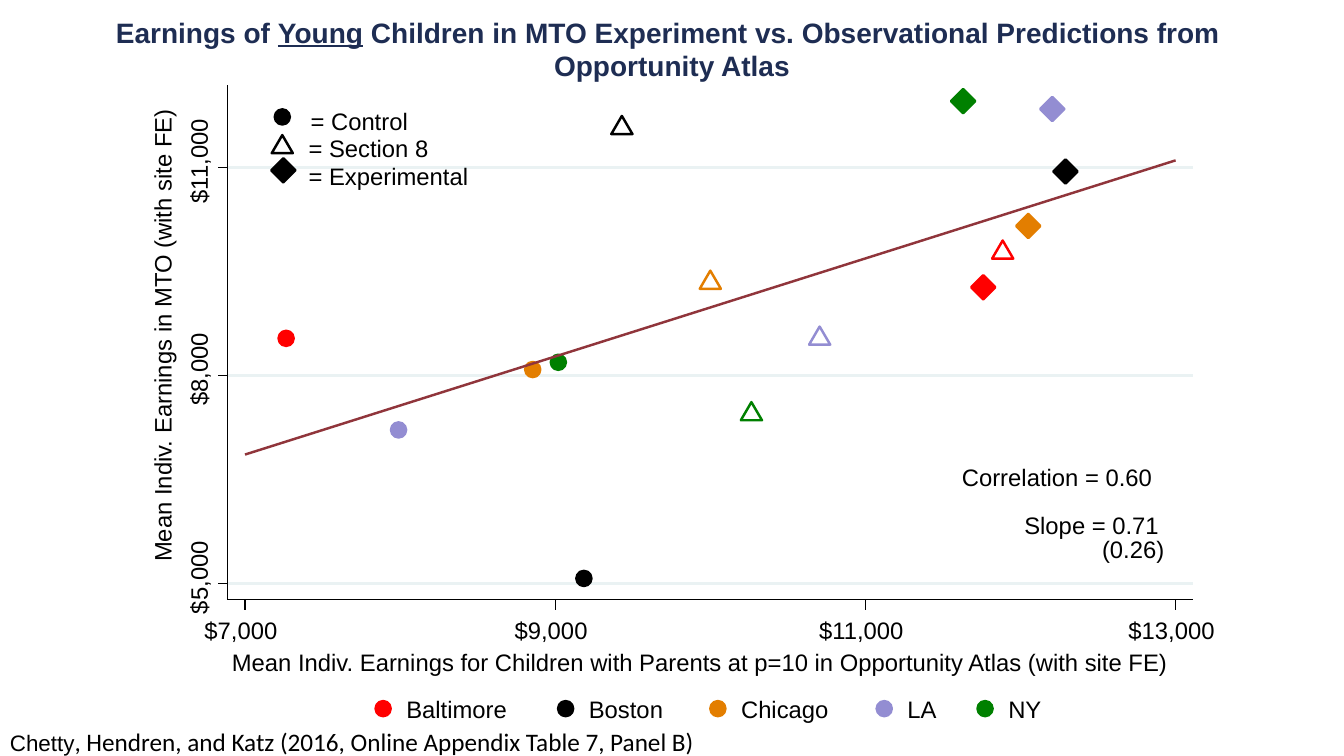
import pptx
import pptx.util
import pptx.dml.color
import pptx.enum.shapes
import pptx.enum.text
import pptx.oxml
import pptx.oxml.ns
from dataclasses import dataclass

Inches = pptx.util.Inches
Pt = pptx.util.Pt
Shape = pptx.enum.shapes.MSO_SHAPE
Align = pptx.enum.text.PP_ALIGN

# ---- Content ----
TITLE = [
    [("Earnings of ", False), ("Young", True),
     (" Children in MTO Experiment vs. Observational Predictions from ", False)],
    [("Opportunity Atlas", False)],
]
X_TITLE = ("Mean Indiv. Earnings for Children with Parents at p=10 "
           "in Opportunity Atlas (with site FE)")
Y_TITLE = "Mean Indiv. Earnings in MTO (with site FE)"
X_TICKS = (7000, 9000, 11000, 13000)
Y_TICKS = (5000, 8000, 11000)

# Dollars: (Opportunity Atlas prediction, earnings in MTO)
EARNINGS = {
    "Control": {"Boston": (9185, 5075), "Baltimore": (7265, 8535), "Chicago": (8855, 8085),
                "LA": (7990, 7215), "NY": (9020, 8190)},
    "Section 8": {"Boston": (9430, 11610), "Baltimore": (11885, 9815), "Chicago": (10000, 9380),
                  "LA": (10705, 8575), "NY": (10265, 7485)},
    "Experimental": {"Boston": (12290, 10940), "Baltimore": (11760, 9270),
                     "Chicago": (12050, 10155), "LA": (12205, 11840), "NY": (11630, 11955)},
}
FIT_LINE = ((7000, 6860), (13000, 11100))
# Text, left, top, width
STATISTICS = [("Correlation = 0.60", 9.54, 4.59, 2),
              ("Slope = 0.71", 10.16, 5.07, 1.5),
              ("(0.26)", 10.93, 5.3, 0.75)]
# Group, marker centre across, marker centre down, label left, label top
GROUP_KEY = [("Control", 2.8, 1.16, 3.08, 1.06),
             ("Section 8", 2.8, 1.43, 3.06, 1.33),
             ("Experimental", 2.81, 1.69, 3.06, 1.6)]
# City, marker centre, label width
CITY_KEY = [("Baltimore", 3.8, 1.1), ("Boston", 5.61, 0.85), ("Chicago", 7.12, 1),
            ("LA", 8.77, 0.4), ("NY", 9.77, 0.45)]
SOURCE = [("Chetty", "Arial", 16),
          (", Hendren, and Katz (2016, Online Appendix Table 7, Panel B)", "Calibri", 18)]


# ---- Theme ----
@dataclass(frozen=True)
class Theme:
    font: str = "Arial"
    title_size: float = 20
    label_size: float = 17
    title: str = "1E2D53"
    ink: str = "000000"
    grid: str = "EAF2F3"
    fit: str = "90353B"
    thin: float = 0.88
    thick: float = 1.75


THEME = Theme()
CITY_COLORS = {"Baltimore": "FF0000", "Boston": "000000", "Chicago": "E37E00",
               "LA": "938DD2", "NY": "008000"}
# Shape, width, height, filled
MARKERS = {"Control": (Shape.OVAL, 0.15, 0.15, True),
           "Section 8": (Shape.ISOSCELES_TRIANGLE, 0.21, 0.18, False),
           "Experimental": (Shape.DIAMOND, 0.24, 0.24, True)}

# ---- Plot geometry, in inches ----
LEFT, RIGHT, TOP, BOTTOM = 2.26, 11.83, 0.84, 5.95
X_START, X_END = 2.43, 11.66
Y_START, Y_END = 5.79, 1.66
TICK = 0.1
TICK_LABEL_WIDTH = 1.1
LABEL_HEIGHT = 0.29


def x_at(dollars):
    return X_START + (dollars - X_TICKS[0]) / (X_TICKS[-1] - X_TICKS[0]) * (X_END - X_START)


def y_at(dollars):
    return Y_START + (dollars - Y_TICKS[0]) / (Y_TICKS[-1] - Y_TICKS[0]) * (Y_END - Y_START)


def rgb(color):
    return pptx.dml.color.RGBColor.from_string(color)


def add_span(para, text, size, color=THEME.ink, font=THEME.font):
    span = para.add_run()
    span.text = text
    span.font.name = font
    span.font.size = Pt(size)
    span.font.color.rgb = rgb(color)
    return span


def add_label(page, text, left, top, width, align=Align.LEFT, rotation=0):
    box = page.shapes.add_textbox(Inches(left), Inches(top), Inches(width), Inches(LABEL_HEIGHT))
    box.rotation = rotation
    frame = box.text_frame
    frame.word_wrap = False
    frame.margin_left = frame.margin_right = frame.margin_top = frame.margin_bottom = 0
    para = frame.paragraphs[0]
    para.alignment = align
    add_span(para, text, THEME.label_size)


def add_centred_label(page, text, across, down, width, rotation=0):
    add_label(page, text, across - width / 2, down - LABEL_HEIGHT / 2, width,
              Align.CENTER, rotation)


def add_line(page, start, end, color, weight):
    line = page.shapes.add_connector(pptx.enum.shapes.MSO_CONNECTOR.STRAIGHT,
                                     *(Inches(value) for value in (*start, *end)))
    line.line.color.rgb = rgb(color)
    line.line.width = Pt(weight)
    properties = line._element.find(pptx.oxml.ns.qn("p:spPr"))
    properties.append(pptx.oxml.parse_xml(f"<a:effectLst {pptx.oxml.ns.nsdecls('a')}/>"))


def add_marker(page, group, across, down, color):
    preset, width, height, filled = MARKERS[group]
    marker = page.shapes.add_shape(preset, Inches(across - width / 2), Inches(down - height / 2),
                                   Inches(width), Inches(height))
    marker.shadow.inherit = False
    if filled:
        marker.fill.solid()
        marker.fill.fore_color.rgb = rgb(color)
    else:
        marker.fill.background()
    marker.line.color.rgb = rgb(color)
    marker.line.width = Pt(THEME.thick)


def add_title(page):
    box = page.shapes.title
    box.left, box.top, box.width, box.height = (Inches(v) for v in (0, 0.1, 13.33, 0.77))
    frame = box.text_frame
    frame.word_wrap = True
    frame.auto_size = pptx.enum.text.MSO_AUTO_SIZE.NONE
    frame.vertical_anchor = pptx.enum.text.MSO_ANCHOR.TOP
    for index, spans in enumerate(TITLE):
        para = frame.add_paragraph() if index else frame.paragraphs[0]
        para.alignment = Align.CENTER
        for text, underlined in spans:
            span = add_span(para, text, THEME.title_size, THEME.title)
            span.font.bold = True
            span.font.underline = underlined


def add_axes(page):
    for dollars in Y_TICKS:
        down = y_at(dollars)
        add_line(page, (LEFT, down), (RIGHT, down), THEME.grid, THEME.thick)
        add_line(page, (LEFT, down), (LEFT - TICK, down), THEME.ink, THEME.thin)
        add_centred_label(page, f"${dollars:,}", 1.97, down - 0.06, TICK_LABEL_WIDTH, 270)
    for dollars in X_TICKS:
        across = x_at(dollars)
        add_line(page, (across, BOTTOM), (across, BOTTOM + TICK), THEME.ink, THEME.thin)
        add_centred_label(page, f"${dollars:,}", across - 0.04, 6.25, TICK_LABEL_WIDTH)
    add_line(page, (LEFT, BOTTOM), (LEFT, TOP), THEME.ink, THEME.thin)
    add_line(page, (LEFT, BOTTOM), (RIGHT, BOTTOM), THEME.ink, THEME.thin)
    add_centred_label(page, Y_TITLE, 1.61, 3.33, 4.8, 270)
    add_label(page, X_TITLE, 2.3, 6.43, 9.8)


def add_points(page):
    for group, cities in EARNINGS.items():
        for city, (predicted, earned) in cities.items():
            add_marker(page, group, x_at(predicted), y_at(earned), CITY_COLORS[city])
    start, end = ((x_at(x), y_at(y)) for x, y in FIT_LINE)
    add_line(page, start, end, THEME.fit, THEME.thick)
    for statistic in STATISTICS:
        add_label(page, *statistic)


def add_keys(page):
    for group, across, down, left, top in GROUP_KEY:
        add_marker(page, group, across, down, THEME.ink)
        add_label(page, f"= {group}", left, top, 1.75)
    for city, across, width in CITY_KEY:
        add_marker(page, "Control", across, 7.03, CITY_COLORS[city])
        add_label(page, city, across + 0.23, 6.89, width)


def add_source(page):
    box = page.shapes.add_textbox(Inches(0), Inches(7.16), Inches(10.38), Inches(0.4))
    box.text_frame.word_wrap = True
    for text, font, size in SOURCE:
        add_span(box.text_frame.paragraphs[0], text, size, font=font)


def main():
    deck = pptx.Presentation()
    deck.slide_width, deck.slide_height = Inches(13.33), Inches(7.5)
    page = deck.slides.add_slide(deck.slide_layouts.get_by_name("Title Only"))
    add_title(page)
    add_axes(page)
    add_points(page)
    add_keys(page)
    add_source(page)
    deck.save("out.pptx")


if __name__ == "__main__":
    main()
